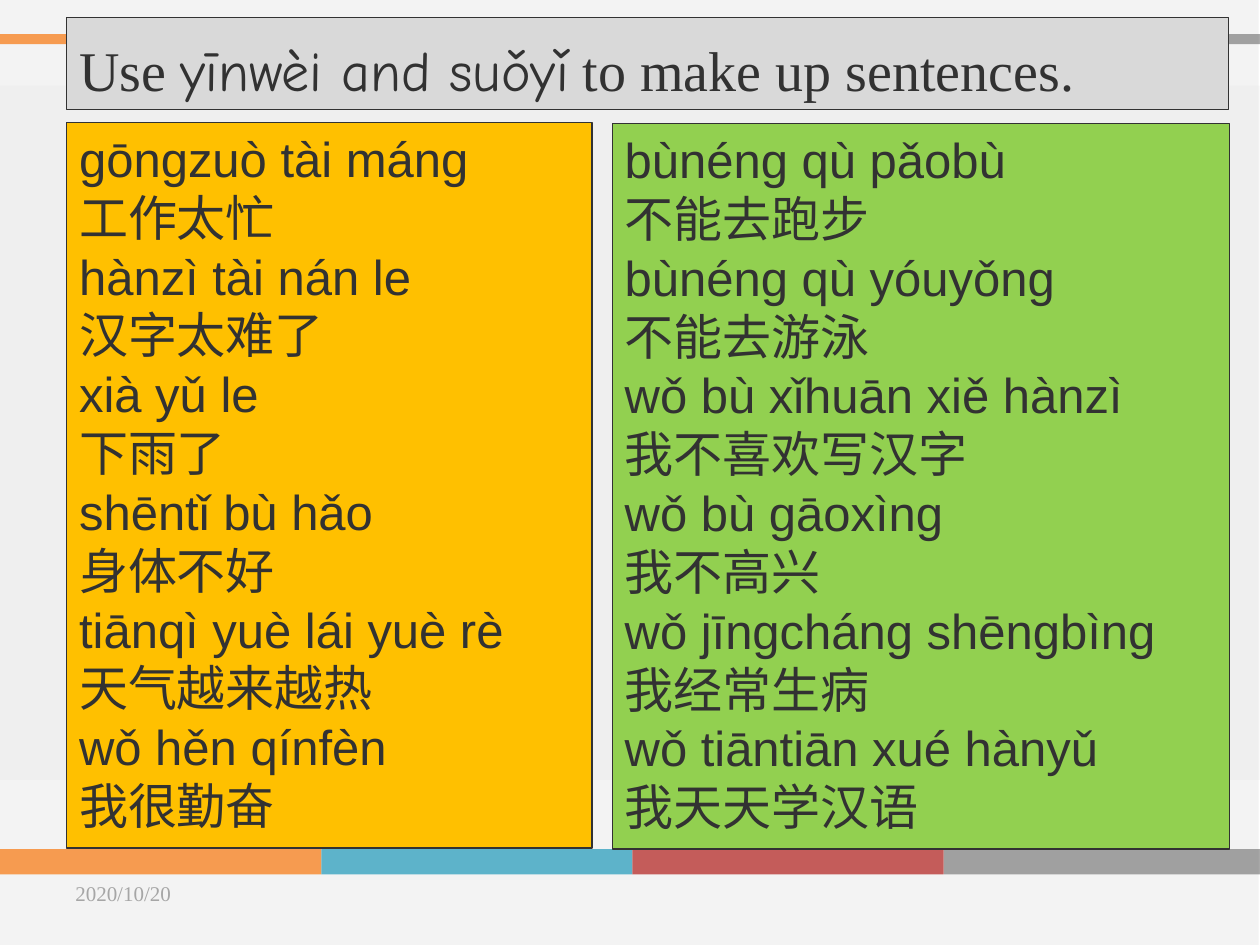
from lxml.etree import SubElement
from pptx import Presentation
from pptx.dml.color import RGBColor
from pptx.enum.shapes import MSO_SHAPE
from pptx.enum.text import MSO_ANCHOR, MSO_AUTO_SIZE, PP_ALIGN
from pptx.oxml.ns import qn
from pptx.util import Inches, Pt

COLORS = {
    "page": "F2F2F2",
    "panel": "D8D8D8",
    "orange": "F79646",
    "blue": "4BACC6",
    "red": "C0504D",
    "black": "000000",
    "title": "D9D9D9",
    "reasons": "FFC000",
    "results": "92D050",
    "ink": "323232",
    "date": "A6A6A6",
}
SERIF, SANS, PINYIN = "Times New Roman", "Arial", "Comic Neue"

# Left, top, width, height, colour, opacity in percent
BACKDROP = [
    (-0.01, -0.02, 10, 7.52, "page", 89),
    (0, 0.68, 10.04, 5.51, "panel", 14),
    (0, 6.74, 2.55, 0.2, "orange", 94),
    (2.55, 6.74, 2.47, 0.2, "blue", 89),
    (5.02, 6.74, 2.47, 0.2, "red", 92),
    (7.49, 6.74, 2.51, 0.2, "black", 34),
    (0, 0.27, 2.47, 0.08, "orange", 94),
    (7.42, 0.27, 2.58, 0.08, "black", 34),
]

TITLE = [
    ("Use ", SERIF),
    ("yīnwèi and suǒyǐ", PINYIN),
    (" to make up sentences.", SERIF),
]
REASONS = [
    ("gōngzuò tài máng", "工作太忙"),
    ("hànzì tài nán le", "汉字太难了"),
    ("xià yǔ le", "下雨了"),
    ("shēntǐ bù hǎo", "身体不好"),
    ("tiānqì yuè lái yuè rè", "天气越来越热"),
    ("wǒ hěn qínfèn", "我很勤奋"),
]
RESULTS = [
    ("bùnéng qù pǎobù", "不能去跑步"),
    ("bùnéng qù yóuyǒng", "不能去游泳"),
    ("wǒ bù xǐhuān xiě hànzì", "我不喜欢写汉字"),
    ("wǒ bù gāoxìng", "我不高兴"),
    ("wǒ jīngcháng shēngbìng", "我经常生病"),
    ("wǒ tiāntiān xué hànyǔ", "我天天学汉语"),
]


def rgb(name):
    return RGBColor.from_string(COLORS[name])


def add_rectangle(page, left, top, width, height, color, opacity=100, outline=None):
    box = page.shapes.add_shape(
        MSO_SHAPE.RECTANGLE, Inches(left), Inches(top), Inches(width), Inches(height)
    )
    box.shadow.inherit = False
    box.fill.solid()
    box.fill.fore_color.rgb = rgb(color)
    if opacity < 100:
        fill = box.fill._xPr.find(qn("a:solidFill"))
        SubElement(fill[0], qn("a:alpha"), val=str(opacity * 1000))
    if outline:
        box.line.color.rgb = rgb(outline)
        box.line.width = Pt(0.75)
    else:
        box.line.fill.background()
    return box


def write_text(box, paragraphs, size, color="ink", anchor=MSO_ANCHOR.TOP, spacing=None):
    """Fill the box with paragraphs, each a list of (text, font) spans."""
    frame = box.text_frame
    frame.word_wrap = True
    frame.vertical_anchor = anchor
    for index, spans in enumerate(paragraphs):
        para = frame.add_paragraph() if index else frame.paragraphs[0]
        para.alignment = PP_ALIGN.LEFT
        para.line_spacing = spacing
        for text, font in spans:
            span = para.add_run()
            span.text = text
            span.font.name = font
            span.font.size = Pt(size)
            span.font.color.rgb = rgb(color)


def add_title(page):
    box = add_rectangle(page, 0.53, 0.14, 9.22, 0.73, "title", outline="ink")
    write_text(box, [TITLE], 32, anchor=MSO_ANCHOR.BOTTOM, spacing=0.9)


def add_date(page):
    box = page.shapes.add_textbox(Inches(0.5), Inches(6.83), Inches(2.33), Inches(0.52))
    write_text(box, [[("2020/10/20", SERIF)]], 12, "date", MSO_ANCHOR.MIDDLE)


def add_phrases(page, phrases, left, top, width, color):
    """Add a panel with each phrase in pinyin above its characters."""
    box = add_rectangle(page, left, top, width, 5.76, color, outline="ink")
    write_text(box, [[(line, SANS)] for phrase in phrases for line in phrase], 28)
    box.text_frame.auto_size = MSO_AUTO_SIZE.SHAPE_TO_FIT_TEXT


def main():
    deck = Presentation()
    deck.slide_width, deck.slide_height = Inches(10), Inches(7.5)
    page = deck.slides.add_slide(deck.slide_layouts[6])
    for band in BACKDROP:
        add_rectangle(page, *band)
    add_title(page)
    add_date(page)
    add_phrases(page, REASONS, 0.53, 0.97, 4.17, "reasons")
    add_phrases(page, RESULTS, 4.86, 0.98, 4.9, "results")
    deck.save("out.pptx")


if __name__ == "__main__":
    main()
